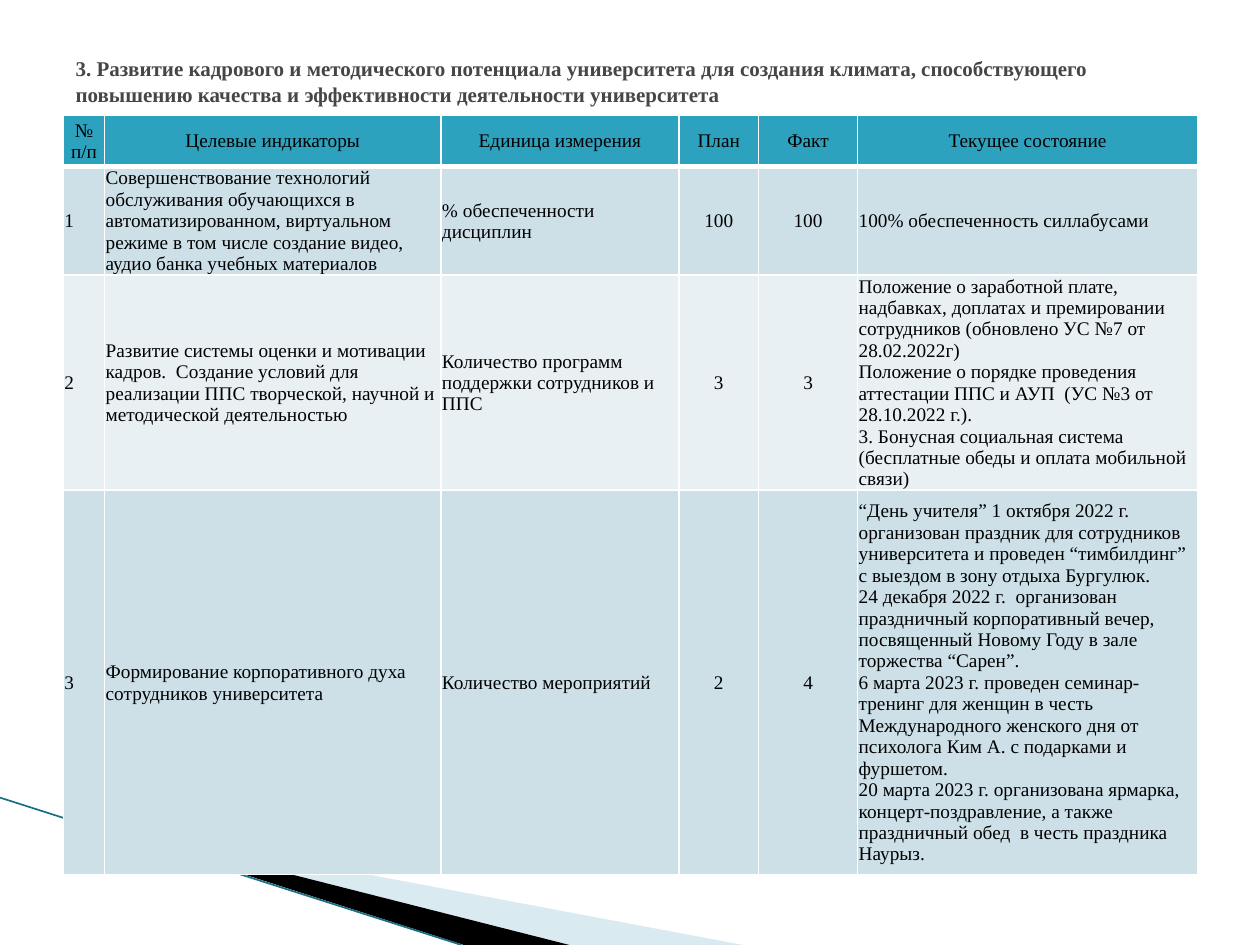
from lxml import etree
from pptx import Presentation
from pptx.dml.color import RGBColor
from pptx.enum.shapes import MSO_CONNECTOR
from pptx.enum.text import MSO_ANCHOR, MSO_AUTO_SIZE, PP_ALIGN
from pptx.oxml.ns import qn
from pptx.util import Cm, Pt

LEFT, CENTER, JUSTIFY = PP_ALIGN.LEFT, PP_ALIGN.CENTER, PP_ALIGN.JUSTIFY
MIDDLE = MSO_ANCHOR.MIDDLE
NO_AUTOFIT = MSO_AUTO_SIZE.NONE
STRAIGHT = MSO_CONNECTOR.STRAIGHT

FONT = "Times New Roman"
HEADER_FILL = "2DA2BF"
BAND_FILLS = ("CDE0E8", "E8F0F4")

TITLE = ("3. Развитие кадрового и методического потенциала университета для создания климата, "
         "способствующего повышению качества и эффективности деятельности университета")

COLUMN_WIDTHS = (0.83, 6.78, 4.8, 1.6, 2, 6.85)
ROW_HEIGHTS = (1.04, 2.18, 4.34, 7.75)
COLUMN_ALIGNMENTS = (JUSTIFY, LEFT, LEFT, CENTER, CENTER, LEFT)

INDICATORS = (
    ("№ п/п", "Целевые индикаторы", "Единица измерения", "План", "Факт", "Текущее состояние"),
    ("1",
     "Совершенствование технологий обслуживания обучающихся в автоматизированном, виртуальном "
     "режиме в том числе создание видео, аудио банка учебных материалов",
     "% обеспеченности дисциплин", "100", "100",
     "100% обеспеченность силлабусами"),
    ("2",
     "Развитие системы оценки и мотивации кадров.  Создание условий для реализации ППС "
     "творческой, научной и методической деятельностью",
     "Количество программ поддержки сотрудников и ППС", "3", "3",
     "Положение о заработной плате, надбавках, доплатах и премировании сотрудников "
     "(обновлено УС №7 от 28.02.2022г)\n"
     "Положение о порядке проведения аттестации ППС и АУП  (УС №3 от 28.10.2022 г.).\n"
     "3. Бонусная социальная система (бесплатные обеды и оплата мобильной связи)"),
    ("3",
     "Формирование корпоративного духа сотрудников университета",
     "Количество мероприятий", "2", "4",
     "“День учителя” 1 октября 2022 г. организован праздник для сотрудников университета "
     "и проведен “тимбилдинг” с выездом в зону отдыха Бургулюк.\n"
     "24 декабря 2022 г.  организован праздничный корпоративный вечер, посвященный "
     "Новому Году в зале торжества “Сарен”.\n"
     "6 марта 2023 г. проведен семинар-тренинг для женщин в честь Международного женского дня "
     "от психолога Ким А. с подарками и фуршетом.\n"
     "20 марта 2023 г. организована ярмарка, концерт-поздравление, а также праздничный обед  "
     "в честь праздника Наурыз."),
)


def color(hex_code):
    return RGBColor.from_string(hex_code)


def apply(target, values):
    for name, value in values.items():
        setattr(target, name, value)


def format_text(paragraph, alignment, size, hex_code, bold):
    paragraph.alignment = alignment
    for run in paragraph.runs:
        apply(run.font, {"name": FONT, "size": Pt(size), "bold": bold})
        run.font.color.rgb = color(hex_code)


def add_wedge(slide, left, top, corners, hex_code, opacity=100):
    points = [(Cm(left + x), Cm(top + y)) for x, y in corners]
    builder = slide.shapes.build_freeform(*points[0])
    builder.add_line_segments(points[1:], close=True)
    wedge = builder.convert_to_shape()
    wedge.shadow.inherit = False
    wedge.line.fill.background()
    wedge.fill.solid()
    wedge.fill.fore_color.rgb = color(hex_code)
    if opacity < 100:
        fill_color = wedge.fill._xPr.find(qn("a:solidFill"))[0]
        etree.SubElement(fill_color, qn("a:alpha"), val=str(opacity * 1000))


def add_corner_decoration(slide, left, top):
    # Pale and black wedges
    add_wedge(slide, left, top, [(1.4, 0.42), (14.98, 2.97), (11.48, 2.97)], "A0CBDC", 40)
    add_wedge(slide, left, top, [(1.35, 0.4), (11.48, 2.97), (9.35, 2.97)], "000000")
    # Thin edge line
    edge = slide.shapes.add_connector(
        STRAIGHT, Cm(left), Cm(top), Cm(left + 9.3), Cm(top + 2.97))
    edge.line.color.rgb = color("1A6F86")
    edge.line.width = Pt(0.95)
    etree.SubElement(edge._element.spPr, qn("a:effectLst"))


def set_borders(cell, bottom_width):
    properties = cell._tc.get_or_add_tcPr()
    widths = {"a:lnL": 1, "a:lnR": 1, "a:lnT": 1, "a:lnB": bottom_width}
    for side, width in widths.items():
        border = etree.SubElement(properties, qn(side), w=str(Pt(width)))
        fill = etree.SubElement(border, qn("a:solidFill"))
        etree.SubElement(fill, qn("a:srgbClr"), val="FFFFFF")


def fill_cell(cell, text, alignment, hex_code, bottom_width):
    set_borders(cell, bottom_width)
    cell.fill.solid()
    cell.fill.fore_color.rgb = color(hex_code)
    apply(cell, {"vertical_anchor": MIDDLE, "margin_left": Cm(0.02), "margin_right": Cm(0.02),
                 "margin_top": Cm(0.02), "margin_bottom": 0})
    cell.text = text
    for paragraph in cell.text_frame.paragraphs:
        format_text(paragraph, alignment, 11, "000000", False)


def add_indicator_table(slide, left, top):
    table = slide.shapes.add_table(
        len(ROW_HEIGHTS), len(COLUMN_WIDTHS), Cm(left), Cm(top),
        Cm(sum(COLUMN_WIDTHS)), Cm(sum(ROW_HEIGHTS))).table
    for column, width in zip(table.columns, COLUMN_WIDTHS):
        column.width = Cm(width)
    for row_index, texts in enumerate(INDICATORS):
        table.rows[row_index].height = Cm(ROW_HEIGHTS[row_index])
        is_header = row_index == 0
        row_fill = HEADER_FILL if is_header else BAND_FILLS[(row_index - 1) % 2]
        for column_index, text in enumerate(texts):
            alignment = CENTER if is_header else COLUMN_ALIGNMENTS[column_index]
            fill_cell(table.cell(row_index, column_index), text, alignment,
                      row_fill, 3 if is_header else 1)


def place_title(slide, left, top, width, height):
    title = slide.shapes.title
    apply(title, {"left": Cm(left), "top": Cm(top), "width": Cm(width), "height": Cm(height)})
    title.text_frame.text = TITLE
    apply(title.text_frame, {"word_wrap": True, "auto_size": NO_AUTOFIT,
                             "vertical_anchor": MIDDLE})
    format_text(title.text_frame.paragraphs[0], LEFT, 12, "464646", True)


def main():
    presentation = Presentation()
    presentation.slide_width, presentation.slide_height = Cm(25.4), Cm(19.05)
    slide = presentation.slides.add_slide(presentation.slide_layouts[5])
    add_corner_decoration(slide, 0, 16.08)
    add_indicator_table(slide, 1.28, 2.32)
    place_title(slide, 1.27, 0.76, 22.86, 1.75)
    presentation.save("out.pptx")


if __name__ == "__main__":
    main()
